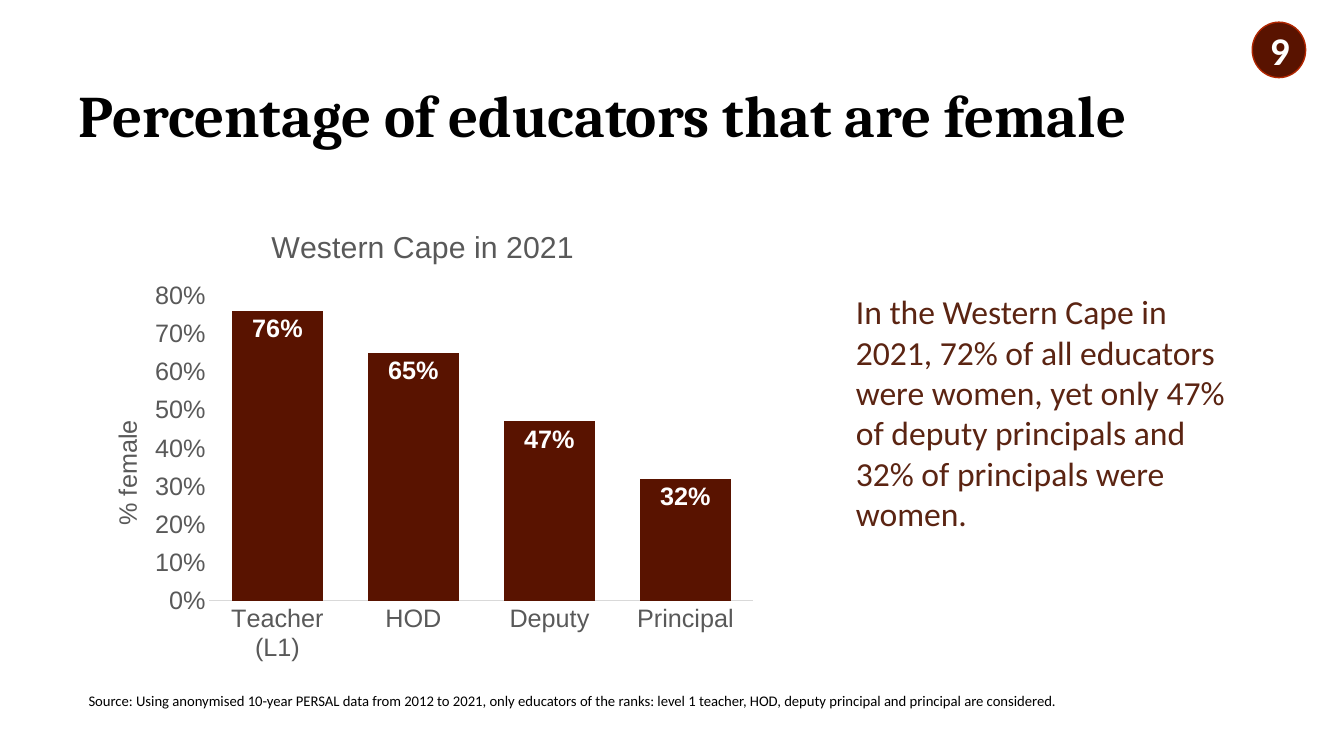
from lxml import etree
from pptx import Presentation
from pptx.chart.data import CategoryChartData
from pptx.dml.color import RGBColor
from pptx.enum.chart import XL_CHART_TYPE, XL_LABEL_POSITION, XL_TICK_MARK
from pptx.enum.shapes import MSO_SHAPE
from pptx.enum.text import MSO_ANCHOR, MSO_AUTO_SIZE, PP_ALIGN
from pptx.oxml.ns import qn
from pptx.util import Pt

PX = 9144  # 100 px to the inch
COLUMN_CLUSTERED = XL_CHART_TYPE.COLUMN_CLUSTERED
INSIDE_END = XL_LABEL_POSITION.INSIDE_END
NO_TICK = XL_TICK_MARK.NONE
OVAL = MSO_SHAPE.OVAL
MIDDLE = MSO_ANCHOR.MIDDLE
FIT_SHAPE = MSO_AUTO_SIZE.SHAPE_TO_FIT_TEXT
LEFT, CENTER = PP_ALIGN.LEFT, PP_ALIGN.CENTER

BLACK = RGBColor(0x00, 0x00, 0x00)
WHITE = RGBColor(0xFF, 0xFF, 0xFF)
MAROON = RGBColor(0x59, 0x13, 0x00)
RED = RGBColor(0xB2, 0x26, 0x00)
BROWN = RGBColor(0x5B, 0x24, 0x12)
GREY = RGBColor(0x59, 0x59, 0x59)
LIGHT_GREY = RGBColor(0xD9, 0xD9, 0xD9)


def style_font(font, name, size, color, bold=False):
    font.name, font.size, font.bold = name, Pt(size), bold
    font.color.rgb = color


def place_in_chart(element, index, **settings):
    """Give a chart part a manual layout, as fractions of the chart."""
    for old_layout in element.findall(qn("c:layout")):
        element.remove(old_layout)
    layout = etree.Element(qn("c:layout"))
    manual = etree.SubElement(layout, qn("c:manualLayout"))
    for tag, value in settings.items():
        etree.SubElement(manual, qn("c:" + tag)).set("val", str(value))
    element.insert(index, layout)


presentation = Presentation()
presentation.slide_width = 1333 * PX
presentation.slide_height = 750 * PX
slide = presentation.slides.add_slide(presentation.slide_layouts[5])

# Title
title = slide.shapes.title
title.left, title.top, title.width, title.height = 68 * PX, 45 * PX, 1150 * PX, 145 * PX
title.fill.solid()
title.fill.fore_color.rgb = WHITE
title.text_frame.text = "Percentage of educators that are female"
title.text_frame.vertical_anchor = MIDDLE
paragraph = title.text_frame.paragraphs[0]
paragraph.alignment = LEFT
paragraph.line_spacing = 0.9
style_font(paragraph.runs[0].font, "Cambria", 42, BLACK, True)

# Slide number badge
badge = slide.shapes.add_shape(OVAL, 1242 * PX, 22 * PX, 53 * PX, 55 * PX)
badge.shadow.inherit = False
badge.fill.solid()
badge.fill.fore_color.rgb = MAROON
badge.line.color.rgb = RED
badge.line.width = Pt(1)
badge.text_frame.text = "9"
badge.text_frame.vertical_anchor = MIDDLE
paragraph = badge.text_frame.paragraphs[0]
paragraph.alignment = CENTER
style_font(paragraph.runs[0].font, "Calibri", 28, WHITE, True)

# Chart
chart_data = CategoryChartData(number_format="0%")
chart_data.categories = ["Teacher (L1)", "HOD", "Deputy", "Principal"]
chart_data.add_series("Series 1", [0.76, 0.65, 0.47, 0.32])
chart = slide.shapes.add_chart(
    COLUMN_CLUSTERED, 78 * PX, 206 * PX, 683 * PX, 459 * PX, chart_data
).chart
style_font(chart.font, "Arial", 18, BLACK)
chart.has_legend = False
category_axis, value_axis = chart.category_axis, chart.value_axis

for owner, text, size in [
    (chart, "Western Cape in 2021", 21.6),
    (value_axis, "% female", 18),
]:
    owner.has_title = True
    heading = owner.chart_title if owner is chart else owner.axis_title
    heading.text_frame.text = text
    style_font(heading.text_frame.paragraphs[0].runs[0].font, "Arial", size, GREY)

for axis in (category_axis, value_axis):
    axis.major_tick_mark = axis.minor_tick_mark = NO_TICK
    axis.has_major_gridlines = False
    style_font(axis.tick_labels.font, "Arial", 18, GREY)
category_axis.format.line.color.rgb = LIGHT_GREY
category_axis.format.line.width = Pt(0.75)
value_axis.format.line.fill.background()
value_axis.minimum_scale, value_axis.maximum_scale = 0, 0.8
value_axis.major_unit = 0.1
value_axis.tick_labels.number_format = "0%"
value_axis.tick_labels.number_format_is_linked = False

plot = chart.plots[0]
plot.gap_width, plot.overlap = 50, -27
plot.vary_by_categories = False
series = plot.series[0]
series.format.fill.solid()
series.format.fill.fore_color.rgb = MAROON
labels = series.data_labels
labels.show_value = True
labels.position = INSIDE_END
labels.number_format = "0%"
labels.number_format_is_linked = False
style_font(labels.font, "Arial", 18, WHITE, True)

plot_area = chart.element.find(".//" + qn("c:plotArea"))
place_in_chart(plot_area, 0, layoutTarget="inner", xMode="edge", yMode="edge",
               x=0.19, y=0.19, w=0.79, h=0.66)
axis_title = plot_area.find(".//" + qn("c:title"))
place_in_chart(axis_title, 1, xMode="edge", yMode="edge", x=0.04, y=0.45)

# Commentary and source
for left, top, width, height, inset, text, size, color in [
    (839, 279, 403, 263, 10,
     "In the Western Cape in 2021, 72% of all educators were women, yet only 47% "
     "of deputy principals and 32% of principals were women.", 24, BROWN),
    (78, 681, 1176, 28, 5,
     "Source: Using anonymised 10-year PERSAL data from 2012 to 2021, only educators "
     "of the ranks: level 1 teacher, HOD, deputy principal and principal are "
     "considered.", 10.5, BLACK),
]:
    text_box = slide.shapes.add_textbox(left * PX, top * PX, width * PX, height * PX)
    text_frame = text_box.text_frame
    text_frame.word_wrap = True
    text_frame.auto_size = FIT_SHAPE
    text_frame.margin_left = text_frame.margin_right = 10 * PX
    text_frame.margin_top = text_frame.margin_bottom = inset * PX
    text_frame.text = text
    style_font(text_frame.paragraphs[0].runs[0].font, "Calibri", size, color)

presentation.save("out.pptx")
